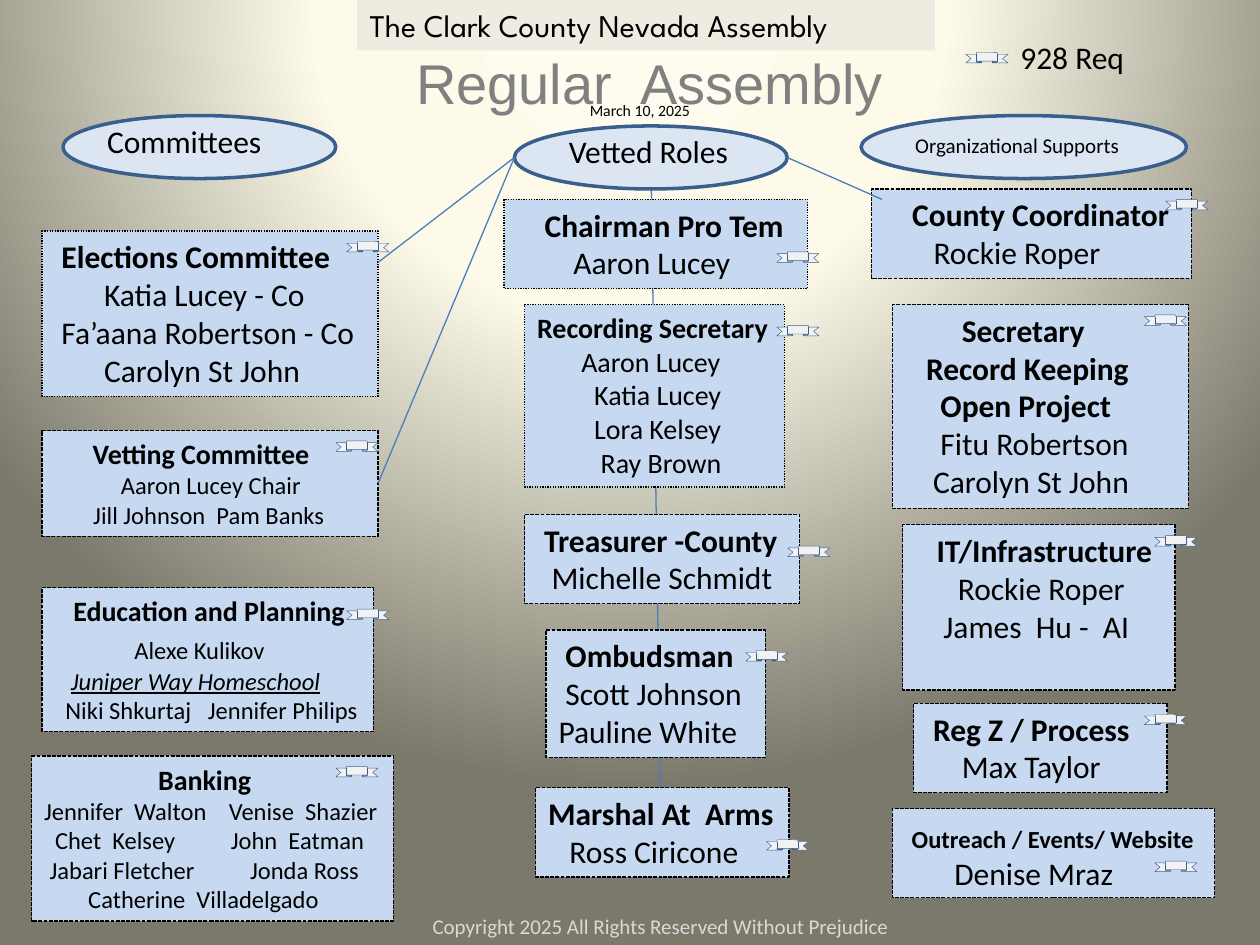
from dataclasses import dataclass
from typing import Optional

import pptx
import pptx.dml.color
import pptx.enum.dml
import pptx.enum.shapes
import pptx.enum.text
import pptx.oxml
import pptx.oxml.ns
import pptx.util

Cm = pptx.util.Cm
Shapes = pptx.enum.shapes.MSO_SHAPE
Dash = pptx.enum.dml.MSO_LINE
Anchor = pptx.enum.text.MSO_ANCHOR
Align = pptx.enum.text.PP_ALIGN
qn = pptx.oxml.ns.qn


@dataclass(frozen=True)
class Theme:
    font: str = "Calibri"
    title_font: str = "Arial"
    banner_font: str = "League Spartan"
    ink: str = "000000"
    title_ink: str = "808080"
    footer_ink: str = "D9D9D9"
    box: str = "C6D9F1"
    oval: str = "DCE6F2"
    banner: str = "EEECE1"
    ribbon: str = "F2F2F2"
    outline: str = "3A5F8C"
    connector: str = "4B7EBC"
    backdrop: tuple = ((0, "FEFCEE"), (40, "FDFAEA"), (100, "7B796B"))
    title: int = 32
    large: int = 18
    medium: int = 16
    small: int = 14
    note: int = 12
    date: int = 9


THEME = Theme()
LARGE, MEDIUM, SMALL = THEME.large, THEME.medium, THEME.small


@dataclass(frozen=True)
class Row:
    text: str
    indent: float = 0  # cm
    size: int = LARGE
    bold: bool = False
    second: str = ""  # second name on the same line
    gap: float = 0  # points added to the space before the second name
    before: int = 0  # points
    emphasis: bool = False  # italic and underlined


@dataclass(frozen=True)
class Role:
    box: tuple
    ribbon: tuple
    rows: tuple
    dash: Dash = Dash.SQUARE_DOT
    anchor: Anchor = Anchor.TOP


@dataclass(frozen=True)
class Label:
    box: tuple
    text: str
    size: int = LARGE
    font: str = THEME.font
    color: str = THEME.ink
    align: Align = Align.LEFT


# Boxes are left, top, width, height in cm; ribbons are left, top
ROLES = {
    "elections": Role((0.85, 4.66, 6.77, 3.33), (6.99, 4.87), (
        Row("Elections Committee", 0.14, bold=True), Row("Katia Lucey - Co", 1),
        Row("Fa’aana Robertson - Co", 0.14), Row("Carolyn St John", 1)), Dash.ROUND_DOT),
    "vetting": Role((0.85, 8.68, 6.77, 2.13), (6.77, 8.89), (
        Row("Vetting Committee", 0.77, MEDIUM, True), Row("Aaron Lucey Chair", 1.34, SMALL),
        Row("Jill Johnson  Pam Banks", 0.78, SMALL))),
    "education": Role((0.85, 11.85, 6.68, 2.9), (6.99, 12.28), (
        Row("Education and Planning", 0.38, MEDIUM, True),
        Row("Alexe Kulikov", 1.61, SMALL, before=4),
        Row("Juniper Way Homeschool", 0.33, SMALL, before=1, emphasis=True),
        Row("Niki Shkurtaj", 0.22, SMALL, second="Jennifer Philips", gap=6.3))),
    "banking": Role((0.64, 15.24, 7.29, 3.33), (6.77, 15.45), (
        Row("Banking", 2.3, MEDIUM, True),
        Row("Jennifer  Walton", 0, SMALL, second="Venise  Shazier", gap=9.5),
        Row("Chet  Kelsey", 0.22, SMALL, second="John  Eatman", gap=28.5),
        Row("Jabari Fletcher", 0.11, SMALL, second="Jonda Ross", gap=28.5),
        Row("Catherine  Villadelgado", 0.89, SMALL))),
    "chairman": Role((10.16, 4.02, 6.12, 1.8), (15.66, 5.08), (
        Row("Chairman Pro Tem", 0.57, bold=True), Row("Aaron Lucey", 1.15)), Dash.ROUND_DOT),
    "recording": Role((10.58, 6.14, 5.23, 3.68), (15.66, 6.56), (
        Row("Recording Secretary", 0, MEDIUM, True), Row("Aaron Lucey", 0.89, MEDIUM),
        Row("Katia Lucey", 1.15, MEDIUM), Row("Lora Kelsey", 1.15, MEDIUM),
        Row("Ray Brown", 1.28, MEDIUM)), Dash.ROUND_DOT),
    "treasurer": Role((10.58, 10.37, 5.54, 1.8), (15.88, 11.01), (
        Row("Treasurer -County", 0.14, bold=True), Row("Michelle Schmidt", 0.29))),
    "ombudsman": Role((11.01, 12.7, 4.42, 2.57), (15.03, 13.12), (
        Row("Ombudsman", 0.14, bold=True), Row("Scott Johnson", 0.14), Row("Pauline White"))),
    "marshal": Role((10.8, 15.88, 5.11, 1.8), (15.45, 16.93), (
        Row("Marshal At  Arms", bold=True), Row("Ross Ciricone", 0.43))),
    "coordinator": Role((17.57, 3.81, 6.45, 1.8), (23.5, 4.02), (
        Row("County Coordinator", 0.57, bold=True), Row("Rockie Roper", 1))),
    "secretary": Role((17.99, 6.14, 5.97, 4.11), (23.07, 6.35), (
        Row("Secretary", 1.15, bold=True), Row("Record Keeping", 0.43, bold=True),
        Row("Open Project", 0.72, bold=True), Row("Fitu Robertson", 0.72),
        Row("Carolyn St John", 0.57))),
    "infrastructure": Role((18.2, 10.58, 5.49, 3.33), (23.28, 10.8), (
        Row("IT/Infrastructure", 0.43, bold=True), Row("Rockie Roper", 0.86),
        Row("James  Hu -  AI", 0.57))),
    "process": Role((18.42, 14.18, 5.11, 1.8), (23.07, 14.4), (
        Row("Reg Z / Process", 0.14, bold=True), Row("Max Taylor", 0.72))),
    "outreach": Role((17.99, 16.3, 6.5, 1.8), (23.28, 17.36), (
        Row("Outreach / Events/ Website", 0.14, SMALL, True), Row("Denise Mraz", 1)),
        anchor=Anchor.BOTTOM),
}
OVALS = ((1.27, 2.33, 5.5, 1.27), (10.37, 2.54, 5.5, 1.27), (17.36, 2.33, 6.56, 1.27))
BANNER = Label((7.2, 0, 11.65, 1.02), "The Clark County Nevada Assembly", font=THEME.banner_font)
LABELS = (
    Label((7.41, 0.85, 11.38, 1.63), "Regular  Assembly", THEME.title, THEME.title_font,
          THEME.title_ink, Align.CENTER),
    Label((11.64, 1.91, 2.54, 0.64), "March 10, 2025", THEME.date),
    Label((1.91, 2.33, 3.66, 1.02), "Committees"),
    Label((11.22, 2.54, 3.76, 1.02), "Vetted Roles"),
    Label((18.2, 2.54, 4.65, 0.76), "Organizational Supports", THEME.note),
    Label((20.32, 0.64, 3.18, 1.02), "928 Req"),
    Label((8.47, 18.29, 9.8, 0.76), "Copyright 2025 All Rights Reserved Without Prejudice",
          THEME.note, color=THEME.footer_ink),
)
LEGEND_RIBBON = (19.47, 1.06)
RIBBON_SIZE = (0.85, 0.21)


def rgb(value: str):
    return pptx.dml.color.RGBColor.from_string(value)


def paint_background(slide) -> None:
    slide.background.fill.solid()
    stops = "".join(f'<a:gs pos="{position * 1000}"><a:srgbClr val="{color}"/></a:gs>'
                    for position, color in THEME.backdrop)
    gradient = pptx.oxml.parse_xml(
        f'<a:gradFill {pptx.oxml.ns.nsdecls("a")} rotWithShape="1"><a:gsLst>{stops}</a:gsLst>'
        '<a:path path="circle"><a:fillToRect l="50000" t="-80000" r="50000" b="180000"/>'
        '</a:path></a:gradFill>')
    properties = slide.element.find(".//" + qn("p:bgPr"))
    properties.replace(properties.find(qn("a:solidFill")), gradient)


def add_block(slide, kind, box: tuple, fill: str, line: Optional[str] = None,
              width: float = 0.75, dash=None):
    shape = slide.shapes.add_shape(kind, *map(Cm, box))
    shape.shadow.inherit = False
    shape.fill.solid()
    shape.fill.fore_color.rgb = rgb(fill)
    if line is None:
        shape.line.fill.background()
    else:
        shape.line.color.rgb = rgb(line)
        shape.line.width = pptx.util.Pt(width)
        if dash is not None:
            shape.line.dash_style = dash
    return shape


def format_font(font, size: int, color: str, name: str) -> None:
    font.size, font.name = pptx.util.Pt(size), name
    font.color.rgb = rgb(color)


def add_second_name(paragraph, row: Row) -> None:
    space = paragraph.add_run()
    space.text = " "
    space.font._element.set("spc", str(round(row.gap * 100)))
    paragraph.add_run().text = row.second


def add_role(slide, role: Role):
    shape = add_block(slide, Shapes.RECTANGLE, role.box, THEME.box, THEME.ink, dash=role.dash)
    frame = shape.text_frame
    frame.word_wrap, frame.vertical_anchor = True, role.anchor
    frame.text = "\n".join(row.text for row in role.rows)
    for paragraph, row in zip(frame.paragraphs, role.rows):
        paragraph.alignment = Align.LEFT
        paragraph.space_before = pptx.util.Pt(row.before)
        properties = paragraph._p.get_or_add_pPr()
        properties.set("marL", str(Cm(row.indent)))
        properties.set("indent", "0")
        if row.second:
            add_second_name(paragraph, row)
        for run in paragraph.runs:
            format_font(run.font, row.size, THEME.ink, THEME.font)
            run.font.bold = row.bold
            run.font.italic = run.font.underline = row.emphasis
    return shape


def write_label(shape, label: Label) -> None:
    frame = shape.text_frame
    frame.word_wrap, frame.vertical_anchor = False, Anchor.TOP
    frame.text = label.text
    paragraph = frame.paragraphs[0]
    paragraph.alignment = label.align
    format_font(paragraph.runs[0].font, label.size, label.color, label.font)


def add_ribbon(slide, place: tuple) -> None:
    add_block(slide, Shapes.UP_RIBBON, place + RIBBON_SIZE, THEME.ribbon, THEME.outline, 0.25)


def add_line(slide, start: tuple, end: tuple):
    connector = slide.shapes.add_connector(
        pptx.enum.shapes.MSO_CONNECTOR.STRAIGHT, *map(Cm, start + end))
    connector.line.color.rgb = rgb(THEME.connector)
    connector.line.width = pptx.util.Pt(0.75)
    connector._element.spPr.append(
        pptx.oxml.parse_xml(f'<a:effectLst {pptx.oxml.ns.nsdecls("a")}/>'))
    return connector


def main() -> None:
    presentation = pptx.Presentation()
    presentation.slide_width, presentation.slide_height = Cm(25.4), Cm(19.05)
    slide = presentation.slides.add_slide(presentation.slide_layouts[6])
    paint_background(slide)

    # Spine behind the vetted roles, then the role boxes
    add_line(slide, (13.13, 3.81), (13.34, 17.78))
    boxes = {name: add_role(slide, role) for name, role in ROLES.items()}

    # Column headings, banner and labels
    for oval in OVALS:
        add_block(slide, Shapes.OVAL, oval, THEME.oval, THEME.outline, 2)
    write_label(add_block(slide, Shapes.RECTANGLE, BANNER.box, THEME.banner), BANNER)
    for label in LABELS:
        write_label(slide.shapes.add_textbox(*map(Cm, label.box)), label)

    # Branches from the vetted roles heading
    left, top, width, height = OVALS[1]
    middle = top + height / 2
    add_line(slide, (left + width, middle), (17.78, 4.02))
    add_line(slide, (left, middle), (7.62, 5.29))
    add_line(slide, (left, middle), (7.62, 9.75)).end_connect(boxes["vetting"], 3)

    # Ribbons mark the required roles
    for place in (LEGEND_RIBBON, *(role.ribbon for role in ROLES.values())):
        add_ribbon(slide, place)

    presentation.save("out.pptx")


if __name__ == "__main__":
    main()
